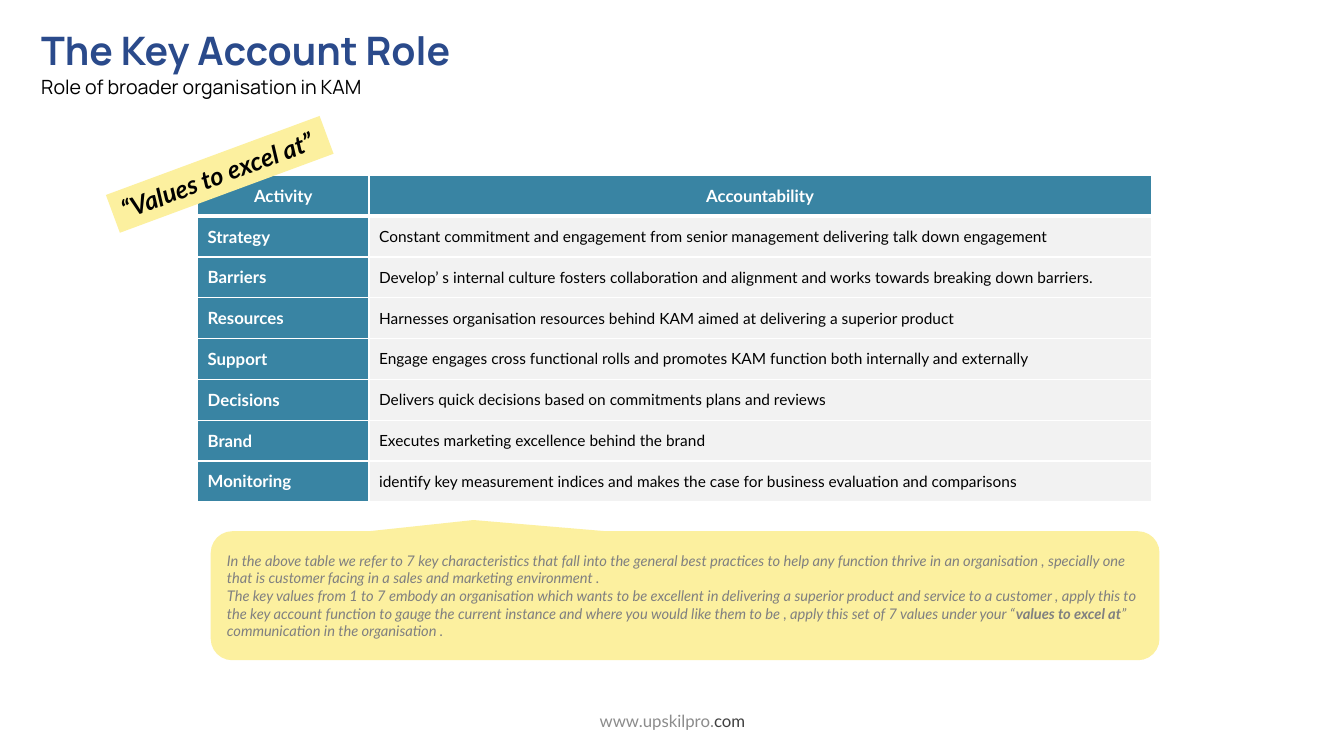
from lxml.etree import SubElement
from pptx import Presentation
from pptx.dml.color import RGBColor
from pptx.enum.shapes import MSO_SHAPE
from pptx.enum.text import MSO_ANCHOR, PP_ALIGN
from pptx.oxml.ns import qn
from pptx.util import Inches, Pt

WHITE, BLACK, GREY = "FFFFFF", "000000", "808080"
NAVY, TEAL, PALE, YELLOW = "2A4A8B", "3984A3", "F2F2F2", "FCF09F"

ACCOUNTABILITIES = [
    ("Strategy", "Constant commitment and engagement from senior management delivering talk down engagement"),
    ("Barriers", "Develop’ s internal culture fosters collaboration and alignment and works towards "
                 "breaking down barriers."),
    ("Resources", "Harnesses organisation resources behind KAM aimed at delivering a superior product"),
    ("Support", "Engage engages cross functional rolls and promotes KAM function both internally and externally"),
    ("Decisions", "Delivers quick decisions based on commitments plans and reviews"),
    ("Brand", "Executes marketing excellence behind the brand"),
    ("Monitoring", "identify key measurement indices and makes the case for business evaluation and comparisons"),
]


def rgb(color):
    return RGBColor.from_string(color)


def add_run(paragraph, text, size, color, font="Lato", bold=False, italic=False):
    run = paragraph.add_run()
    run.text = text
    run.font.name = font
    run.font.size = Pt(size)
    run.font.color.rgb = rgb(color)
    run.font.bold = bold
    run.font.italic = italic


def add_text_frame(slide, box):
    frame = slide.shapes.add_textbox(*map(Inches, box)).text_frame
    frame.word_wrap = True
    return frame


def add_yellow_shape(slide, kind, box):
    shape = slide.shapes.add_shape(kind, *map(Inches, box))
    shape.shadow.inherit = False
    shape.fill.solid()
    shape.fill.fore_color.rgb = rgb(YELLOW)
    shape.line.fill.background()
    return shape


def add_heading(slide, box):
    frame = add_text_frame(slide, box)
    add_run(frame.paragraphs[0], "The Key Account Role", 28, NAVY, "Manrope", bold=True)
    subtitle = frame.add_paragraph()
    subtitle.line_spacing = 1.07
    subtitle.space_after = Pt(8)
    add_run(subtitle, "Role of broader organisation in KAM", 14, BLACK, "Manrope")


def add_footer(slide, box):
    frame = add_text_frame(slide, box)
    frame.vertical_anchor = MSO_ANCHOR.MIDDLE
    address = frame.paragraphs[0]
    address.alignment = PP_ALIGN.CENTER
    add_run(address, "www.upskilpro.", 12, "8C8C8C")
    add_run(address, "com", 12, "404040")


def set_borders(cell, bottom_width):
    """Draw white borders; they must precede the fill in the cell properties."""
    properties = cell._tc.get_or_add_tcPr()
    for side, width in (("L", 1), ("R", 1), ("T", 1), ("B", bottom_width)):
        line = SubElement(properties, qn(f"a:ln{side}"), w=str(Pt(width)))
        fill = SubElement(line, qn("a:solidFill"))
        SubElement(fill, qn("a:srgbClr"), val=WHITE)


def add_accountability_table(slide, box):
    rows = [("Activity", "Accountability")] + ACCOUNTABILITIES
    table = slide.shapes.add_table(len(rows), 2, *map(Inches, box)).table
    activity_width = 1.7
    table.columns[0].width = Inches(activity_width)
    table.columns[1].width = Inches(box[2] - activity_width)
    for r, texts in enumerate(rows):
        for c, text in enumerate(texts):
            is_header = r == 0
            is_label = is_header or c == 0
            cell = table.cell(r, c)
            set_borders(cell, 3 if is_header else 1)
            cell.fill.solid()
            cell.fill.fore_color.rgb = rgb(TEAL if is_label else PALE)
            cell.vertical_anchor = MSO_ANCHOR.MIDDLE
            paragraph = cell.text_frame.paragraphs[0]
            paragraph.alignment = PP_ALIGN.CENTER if is_header else PP_ALIGN.LEFT
            add_run(paragraph, text, 12 if is_label else 11, WHITE if is_label else BLACK, bold=is_label)


def add_explanation(slide, box):
    callout = add_yellow_shape(slide, MSO_SHAPE.ROUNDED_RECTANGULAR_CALLOUT, box)
    for index, value in enumerate((-0.223, -0.587, 0.167)):
        callout.adjustments[index] = value
    frame = callout.text_frame
    frame.word_wrap = True
    frame.vertical_anchor = MSO_ANCHOR.MIDDLE
    characteristics, values = frame.paragraphs[0], frame.add_paragraph()
    characteristics.alignment = values.alignment = PP_ALIGN.LEFT
    add_run(characteristics, "In the above table we refer to 7 key characteristics that fall into the general best "
            "practices to help any function thrive in an organisation , specially one that is customer "
            "facing in a sales and marketing environment .", 10.5, GREY, italic=True)
    for text, bold in (
        ("The key values from 1 to 7 embody an organisation which wants to be excellent in delivering a "
         "superior product and service to a customer , apply this to the key account function to gauge the "
         "current instance and where you would like them to be , apply this set of 7 values under your “", False),
        ("values to excel at", True),
        ("” communication in the organisation .", False),
    ):
        add_run(values, text, 10.5, GREY, bold=bold, italic=True)


def add_values_label(slide, box):
    label = add_yellow_shape(slide, MSO_SHAPE.RECTANGLE, box)
    label.rotation = 339.7
    frame = label.text_frame
    frame.word_wrap = False
    frame.vertical_anchor = MSO_ANCHOR.TOP
    frame.paragraphs[0].alignment = PP_ALIGN.LEFT
    add_run(frame.paragraphs[0], "“Values to excel at”", 18, BLACK, bold=True, italic=True)


def main():
    presentation = Presentation()
    presentation.slide_width = Inches(13.33)
    presentation.slide_height = Inches(7.5)
    slide = presentation.slides.add_slide(presentation.slide_layouts[6])
    add_heading(slide, (0.31, 0.21, 7.01, 0.82))
    add_footer(slide, (4.42, 6.95, 4.5, 0.4))
    add_accountability_table(slide, (1.96, 1.74, 9.46, 3.24))
    add_explanation(slide, (2.09, 5.27, 9.41, 1.28))
    add_values_label(slide, (1.05, 1.53, 2.26, 0.4))
    presentation.save("out.pptx")


if __name__ == "__main__":
    main()
